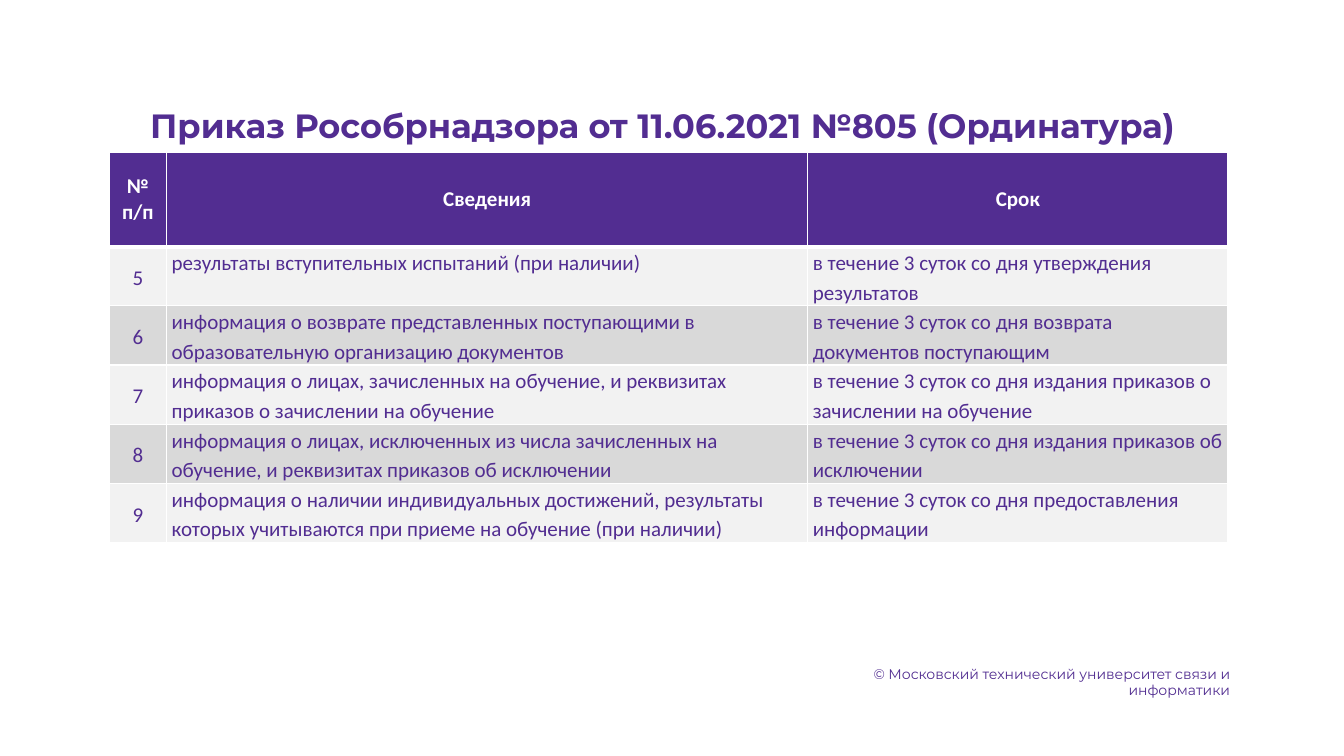
from dataclasses import dataclass

from lxml.etree import SubElement
from pptx import Presentation
from pptx.dml.color import RGBColor
from pptx.enum.text import MSO_ANCHOR as Anchor, PP_ALIGN as Align
from pptx.oxml.ns import qn
from pptx.table import _Cell as Cell
from pptx.text.text import _Paragraph as Paragraph
from pptx.util import Pt

PURPLE = RGBColor(0x52, 0x2D, 0x91)
FOOTER_PURPLE = RGBColor(0x52, 0x2E, 0x91)
WHITE = RGBColor(0xFF, 0xFF, 0xFF)
LIGHT = RGBColor(0xF2, 0xF2, 0xF2)
GREY = RGBColor(0xD9, 0xD9, 0xD9)

HEADERS = ("№ п/п", "Сведения", "Срок")
COLUMN_WIDTHS = (41, 458, 300.2)
HEADER_HEIGHT = 67.5
ROW_HEIGHT = 42.2
FIRST_NUMBER = 5


@dataclass
class Notice:
    details: str
    deadline: str


NOTICES = [
    Notice("результаты вступительных испытаний (при наличии)",
           "в течение 3 суток со дня утверждения результатов"),
    Notice("информация о возврате представленных поступающими в образовательную организацию документов",
           "в течение 3 суток со дня возврата документов поступающим"),
    Notice("информация о лицах, зачисленных на обучение, и реквизитах приказов о зачислении на обучение",
           "в течение 3 суток со дня издания приказов о зачислении на обучение"),
    Notice("информация о лицах, исключенных из числа зачисленных на обучение, и реквизитах приказов об исключении",
           "в течение 3 суток со дня издания приказов об исключении"),
    Notice("информация о наличии индивидуальных достижений, результаты которых учитываются при приеме на обучение (при наличии)",
           "в течение 3 суток со дня предоставления информации"),
]


def style_text(p: Paragraph, font: str, size: float, color: RGBColor, bold: bool, align: Align) -> None:
    p.alignment = align
    for r in p.runs:
        r.font.name = font
        r.font.size = Pt(size)
        r.font.bold = bold
        r.font.color.rgb = color


def set_borders(cell: Cell, top: float, bottom: float) -> None:
    tc_pr = cell._tc.get_or_add_tcPr()
    for side, width in (("L", 1), ("R", 1), ("T", top), ("B", bottom)):
        ln = SubElement(tc_pr, qn(f"a:ln{side}"), w=str(Pt(width)))
        fill = SubElement(ln, qn("a:solidFill"))
        SubElement(fill, qn("a:srgbClr"), val=str(WHITE))


def fill_cell(cell: Cell, text: str, row: int, column: int) -> None:
    header = row == 0
    centred = header or column == 0
    set_borders(cell, 3 if row == 1 else 1, 3 if header else 1)
    cell.fill.solid()
    cell.fill.fore_color.rgb = PURPLE if header else LIGHT if row % 2 else GREY
    cell.vertical_anchor = Anchor.MIDDLE if centred else Anchor.TOP
    cell.margin_left = cell.margin_right = Pt(0.7 if centred else 3.6)
    cell.margin_top = cell.margin_bottom = Pt(0.7 if centred else 0)
    cell.text_frame.text = text
    p = cell.text_frame.paragraphs[0]
    if not header:
        p.line_spacing = 1.15
    style_text(p, "Calibri", 15, WHITE if header else PURPLE, header,
               Align.CENTER if centred else Align.LEFT)


def main() -> None:
    prs = Presentation()
    prs.slide_width, prs.slide_height = Pt(960), Pt(540)
    slide = prs.slides.add_slide(prs.slide_layouts[5])

    title = slide.shapes.title
    title.left, title.top, title.width, title.height = Pt(100.1), Pt(71.3), Pt(748), Pt(36)
    tf = title.text_frame
    tf.text = "Приказ Рособрнадзора от 11.06.2021 №805 (Ординатура)"
    tf.word_wrap = True
    tf.vertical_anchor = Anchor.TOP
    style_text(tf.paragraphs[0], "Montserrat", 24, PURPLE, True, Align.LEFT)

    rows = [HEADERS] + [(str(number), notice.details, notice.deadline)
                        for number, notice in enumerate(NOTICES, FIRST_NUMBER)]
    table = slide.shapes.add_table(
        len(rows), len(HEADERS), Pt(78), Pt(108.7), Pt(sum(COLUMN_WIDTHS)),
        Pt(HEADER_HEIGHT + ROW_HEIGHT * len(NOTICES))).table
    for column, width in zip(table.columns, COLUMN_WIDTHS):
        column.width = Pt(width)
    for i, texts in enumerate(rows):
        table.rows[i].height = Pt(ROW_HEIGHT if i else HEADER_HEIGHT)
        for j, text in enumerate(texts):
            fill_cell(table.cell(i, j), text, i, j)

    footer = slide.shapes.add_textbox(Pt(596.9), Pt(471.6), Pt(288.7), Pt(19.4))
    tf = footer.text_frame
    tf.text = "© Московский технический университет связи и информатики"
    tf.word_wrap = True
    style_text(tf.paragraphs[0], "Montserrat", 10, FOOTER_PURPLE, False, Align.RIGHT)

    prs.save("out.pptx")


if __name__ == "__main__":
    main()
